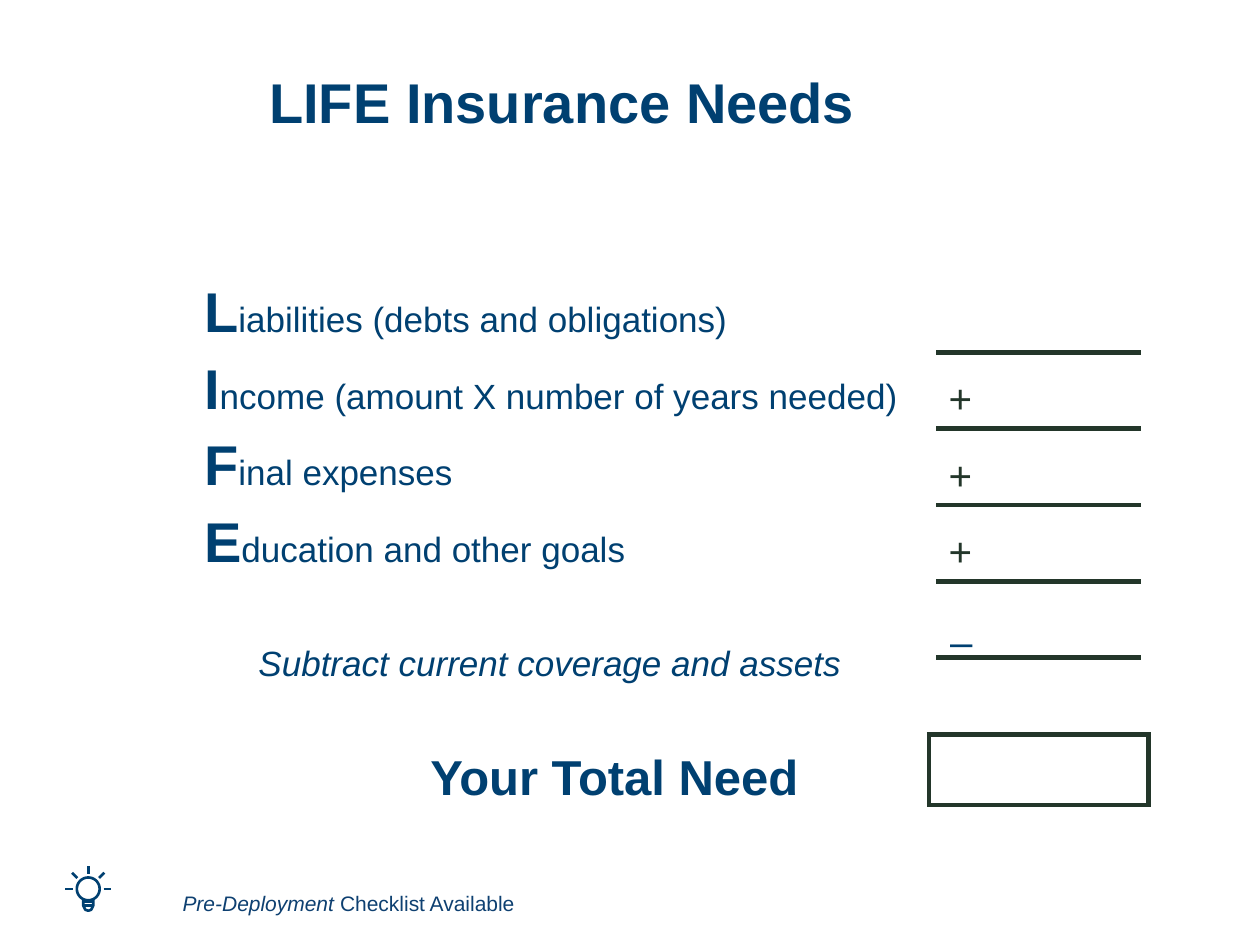
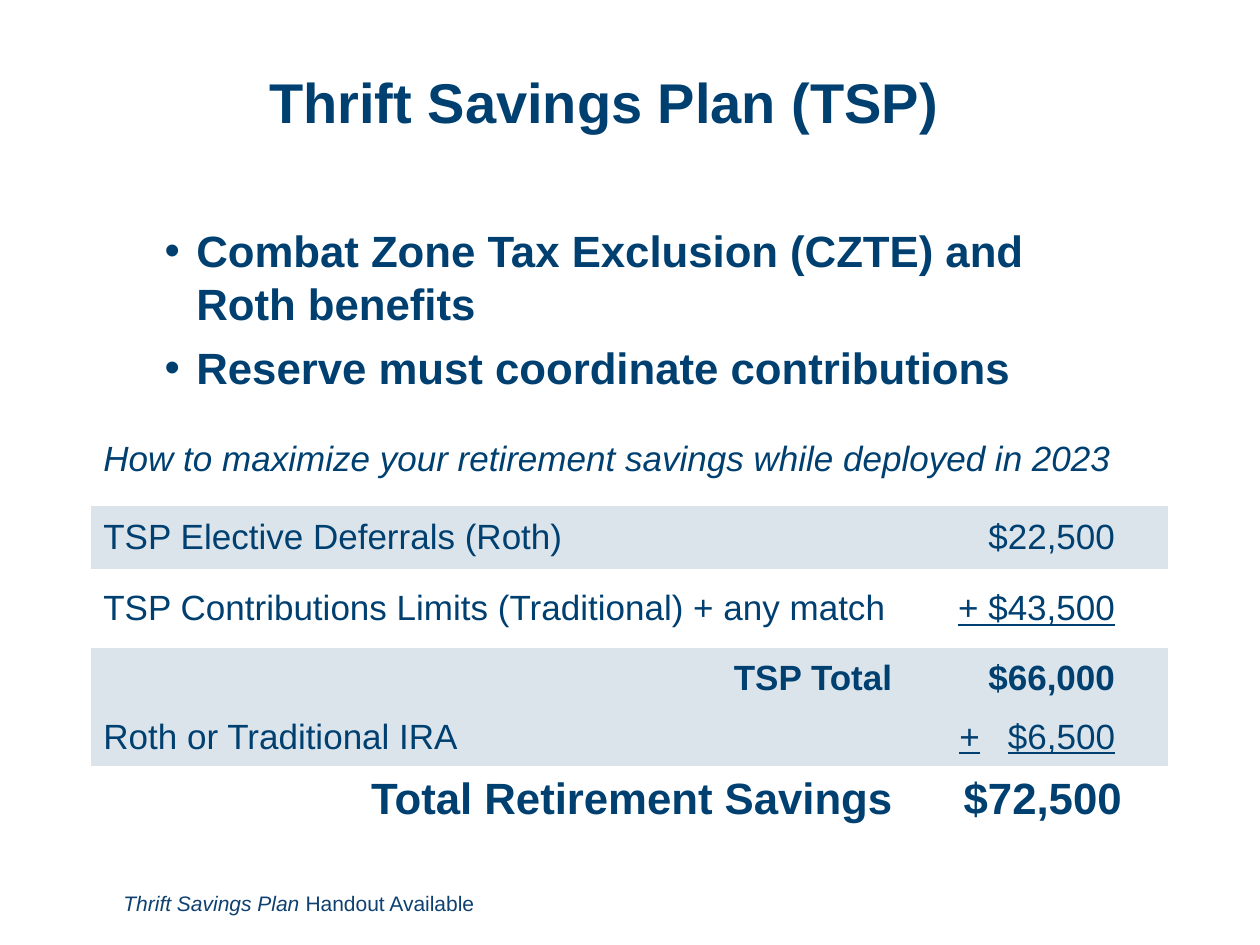
from math import cos, radians, sin

from lxml import etree
from pptx import Presentation
from pptx.dml.color import RGBColor
from pptx.enum.text import MSO_ANCHOR, PP_ALIGN
from pptx.oxml.ns import qn
from pptx.util import Cm, Pt

LEFT, CENTER, RIGHT = PP_ALIGN.LEFT, PP_ALIGN.CENTER, PP_ALIGN.RIGHT
TOP, MIDDLE, BOTTOM = MSO_ANCHOR.TOP, MSO_ANCHOR.MIDDLE, MSO_ANCHOR.BOTTOM

FONT = "Arial"
NAVY, FOOTER_NAVY, RULE, BAND, WHITE = "004071", "0E4071", "23362A", "DCE4EB", "FFFFFF"
PLAIN_TABLE = "{2D5ABB26-0587-4C30-8999-92F81FD0307C}"

# Initial, rest of the label, sign in the amount column
NEEDS = [
    ("L", "iabilities (debts and obligations)", ""),
    ("I", "ncome (amount X number of years needed)", "+"),
    ("F", "inal expenses", "+"),
    ("E", "ducation and other goals", "+"),
]
NEEDS_COLS = [15.01, 4.14]
NEEDS_ROWS = [1.54] * 5 + [1.63] * 2

BENEFITS = [
    "Combat Zone Tax Exclusion (CZTE) and Roth benefits",
    "Reserve must coordinate contributions",
]

SAVINGS_HEAD = "How to maximize your retirement savings while deployed in 2023"
# Label, amount, fill, kind of row
SAVINGS = [
    ("TSP Elective Deferrals (Roth)", "$22,500", BAND, "item"),
    ("TSP Contributions Limits (Traditional) + any match", "+ $43,500", WHITE, "added"),
    ("TSP Total", "$66,000", BAND, "total"),
    ("Roth or Traditional IRA", "+\t$6,500", BAND, "added"),
    ("Total Retirement Savings", "$72,500", None, "grand"),
]
SAVINGS_COLS = [16.41, 5.31]
SAVINGS_ROWS = [1.88, 1.27, 1.6, 1.19, 1.19, 1.27]
AMOUNT_LEFT, AMOUNT_RIGHT, GRAND_RIGHT = 1.1, 1.07, 0.94

BULB_BASE = [(-0.1, 0.2), (-0.1, 0.34), (-0.06, 0.42), (0, 0.44),
             (0.06, 0.42), (0.1, 0.34), (0.1, 0.2)]


def rgb(color):
    return RGBColor.from_string(color)


def set_font(font, size, color=NAVY, bold=False, italic=False, underline=False):
    font.name, font.size = FONT, Pt(size)
    font.bold, font.italic, font.underline = bold, italic, underline
    font.color.rgb = rgb(color)


def write(tf, text, size, align=LEFT, anchor=TOP, **style):
    p = tf.paragraphs[0]
    p.alignment = align
    tf.vertical_anchor = anchor
    add_run(p, text, size, **style)
    return p


def add_run(p, text, size, **style):
    r = p.add_run()
    r.text = text
    set_font(r.font, size, **style)


def add_box(slide, x, y, w, h):
    tf = slide.shapes.add_textbox(Cm(x), Cm(y), Cm(w), Cm(h)).text_frame
    tf.word_wrap = True
    return tf


def add_title(slide, text):
    p = write(add_box(slide, 5.18, 0.28, 18.44, 3.68), text, 32, anchor=MIDDLE, bold=True)
    p.line_spacing = 0.9


def add_footer(slide, x, handout, rest):
    p = write(add_box(slide, x, 17.83, 17.22, 0.76), handout, 12,
              color=FOOTER_NAVY, italic=True)
    add_run(p, rest, 12, color=FOOTER_NAVY)


def add_table(slide, x, y, cols, rows):
    """Add a table with no style, fill or borders."""
    table = slide.shapes.add_table(len(rows), len(cols), Cm(x), Cm(y),
                                   Cm(sum(cols)), Cm(sum(rows))).table
    table.first_row = table.horz_banding = False
    table._tbl.tblPr.find(qn("a:tableStyleId")).text = PLAIN_TABLE
    for col, width in zip(table.columns, cols):
        col.width = Cm(width)
    for row, height in zip(table.rows, rows):
        row.height = Cm(height)
    for cell in table.iter_cells():
        cell.fill.background()
    return table


def set_borders(cell, sides):
    """Draw the sides, given in the order L, R, T, B."""
    tcPr = cell._tc.get_or_add_tcPr()
    for i, side in enumerate(sides):
        ln = etree.Element(qn(f"a:ln{side}"), w=str(Pt(3)))
        fill = etree.SubElement(ln, qn("a:solidFill"))
        etree.SubElement(fill, qn("a:srgbClr"), val=RULE)
        tcPr.insert(i, ln)


def add_bullet(p):
    pPr = p._p.get_or_add_pPr()
    pPr.set("marL", str(Cm(0.66)))
    pPr.set("indent", str(-Cm(0.64)))
    etree.SubElement(pPr, qn("a:buFont"), typeface=FONT)
    etree.SubElement(pPr, qn("a:buChar"), char="•")


def add_right_tab(p, pos):
    tabs = etree.SubElement(p._p.get_or_add_pPr(), qn("a:tabLst"))
    etree.SubElement(tabs, qn("a:tab"), pos=str(Cm(pos)), algn="r")


def arc_point(radius, angle):
    return radius * cos(radians(angle)), -radius * sin(radians(angle))


def add_bulb(slide, cx=1.78, cy=17.92):
    """Draw glass, base, threads and rays as one outline around a centre."""
    strokes = [[arc_point(0.23, angle) for angle in range(0, 361, 10)], BULB_BASE]
    strokes += [[(-0.1, y), (0.1, y)] for y in (0.26, 0.34)]
    strokes += [[arc_point(0.31, angle), arc_point(0.46, angle)]
                for angle in range(0, 181, 45)]
    builder = slide.shapes.build_freeform()
    for stroke in strokes:
        points = [(Cm(cx + x), Cm(cy + y)) for x, y in stroke]
        builder.move_to(*points[0])
        builder.add_line_segments(points[1:], close=False)
    sp = builder.convert_to_shape()
    sp.shadow.inherit = False
    sp.fill.background()
    sp.line.color.rgb = rgb(NAVY)
    sp.line.width = Pt(1.5)


def build_needs(slide):
    add_title(slide, "LIFE Insurance Needs")
    table = add_table(slide, 3.86, 5.56, NEEDS_COLS, NEEDS_ROWS)
    for i, (initial, rest, sign) in enumerate(NEEDS):
        label, amount = table.cell(i, 0), table.cell(i, 1)
        label.margin_bottom = Cm(0.02)
        p = write(label.text_frame, initial, 32, bold=True)
        add_run(p, rest, 20)
        if sign:
            write(amount.text_frame, sign, 23, color=RULE)
            amount.vertical_anchor = BOTTOM
    for i in range(len(NEEDS) + 1):
        set_borders(table.cell(i, 1), "TB" if i else "B")
    for i in range(len(NEEDS) + 1, len(NEEDS_ROWS)):
        table.cell(i, 0).merge(table.cell(i, 1))

    write(add_box(slide, 1.94, 12.8, 15.27, 1.12),
          "Subtract current coverage and assets", 20, RIGHT, italic=True)
    minus = add_table(slide, 18.9, 12.37, [5.11], [1.09])
    write(minus.cell(0, 0).text_frame, "–", 23)
    write(add_box(slide, 7.57, 14.92, 9.63, 1.45), "Your Total Need", 28, CENTER, bold=True)
    total = add_table(slide, 18.73, 14.81, [4.42], [1.42])
    set_borders(total.cell(0, 0), "LRTB")
    add_bulb(slide)
    add_footer(slide, 3.43, "Pre-Deployment ", "Checklist Available")


def build_savings(slide):
    add_title(slide, "Thrift Savings Plan (TSP)")
    tf = add_box(slide, 3.05, 4.39, 19.18, 3.68)
    for i, text in enumerate(BENEFITS):
        p = tf.add_paragraph() if i else tf.paragraphs[0]
        if i:
            p.space_before = Pt(7)
        add_bullet(p)
        add_run(p, text, 25, bold=True)

    table = add_table(slide, 1.83, 8.32, SAVINGS_COLS, SAVINGS_ROWS)
    head = table.cell(0, 0)
    head.merge(table.cell(0, 1))
    write(head.text_frame, SAVINGS_HEAD, 20, italic=True)
    for i, (label, amount, fill, kind) in enumerate(SAVINGS, 1):
        name, value = table.cell(i, 0), table.cell(i, 1)
        is_sum = kind in ("total", "grand")
        size = 25 if kind == "grand" else 20
        tabbed = "\t" in amount
        if tabbed:
            value.margin_left = Cm(AMOUNT_LEFT)
            add_right_tab(value.text_frame.paragraphs[0],
                          SAVINGS_COLS[1] - AMOUNT_LEFT - AMOUNT_RIGHT)
        else:
            value.margin_right = Cm(GRAND_RIGHT if kind == "grand" else AMOUNT_RIGHT)
        write(name.text_frame, label, size, RIGHT if is_sum else LEFT, bold=is_sum)
        write(value.text_frame, amount, size, LEFT if tabbed else RIGHT,
              bold=is_sum, underline=kind == "added")
        if fill:
            for cell in (name, value):
                cell.fill.solid()
                cell.fill.fore_color.rgb = rgb(fill)
    for cell in table.iter_cells():
        cell.vertical_anchor = MIDDLE
    add_footer(slide, 2.24, "Thrift Savings Plan ", "Handout Available")


def main():
    prs = Presentation()
    prs.slide_width, prs.slide_height = Cm(25.4), Cm(19.05)
    for build in (build_needs, build_savings):
        build(prs.slides.add_slide(prs.slide_layouts[6]))
    prs.save("out.pptx")


if __name__ == "__main__":
    main()
